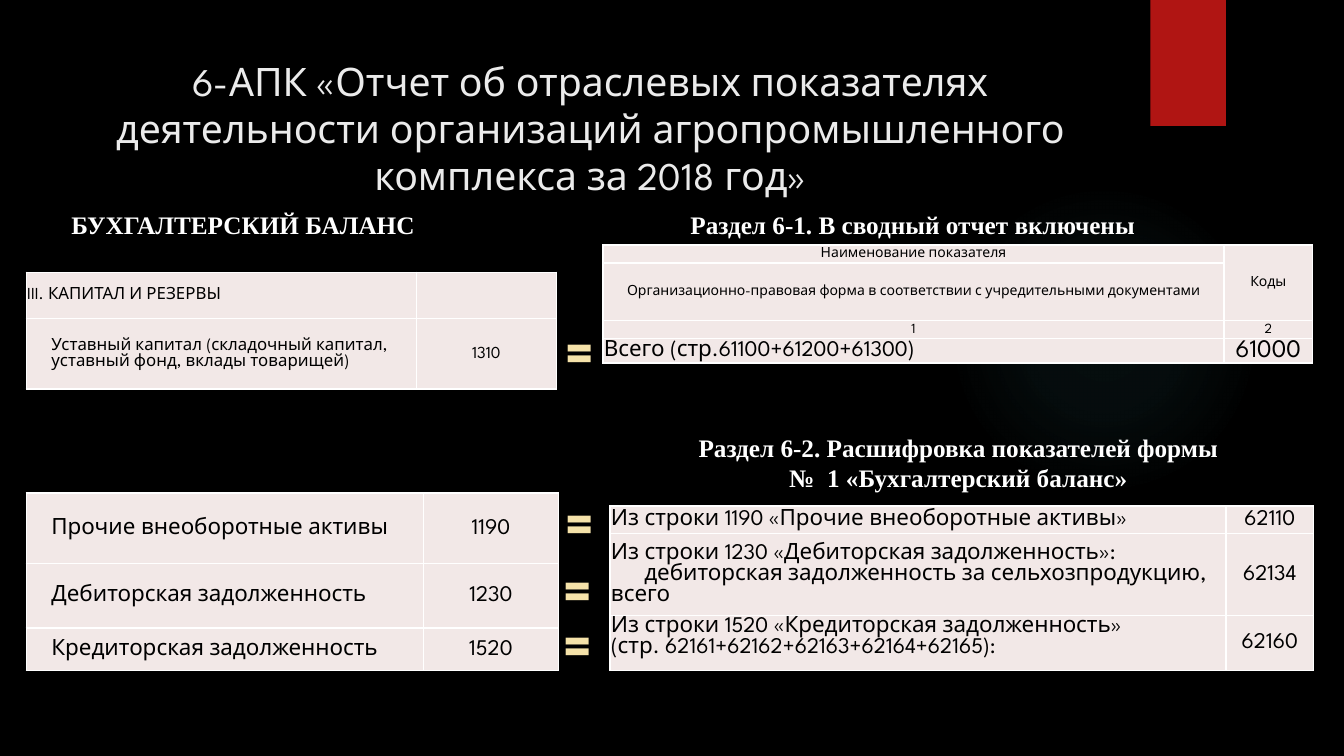
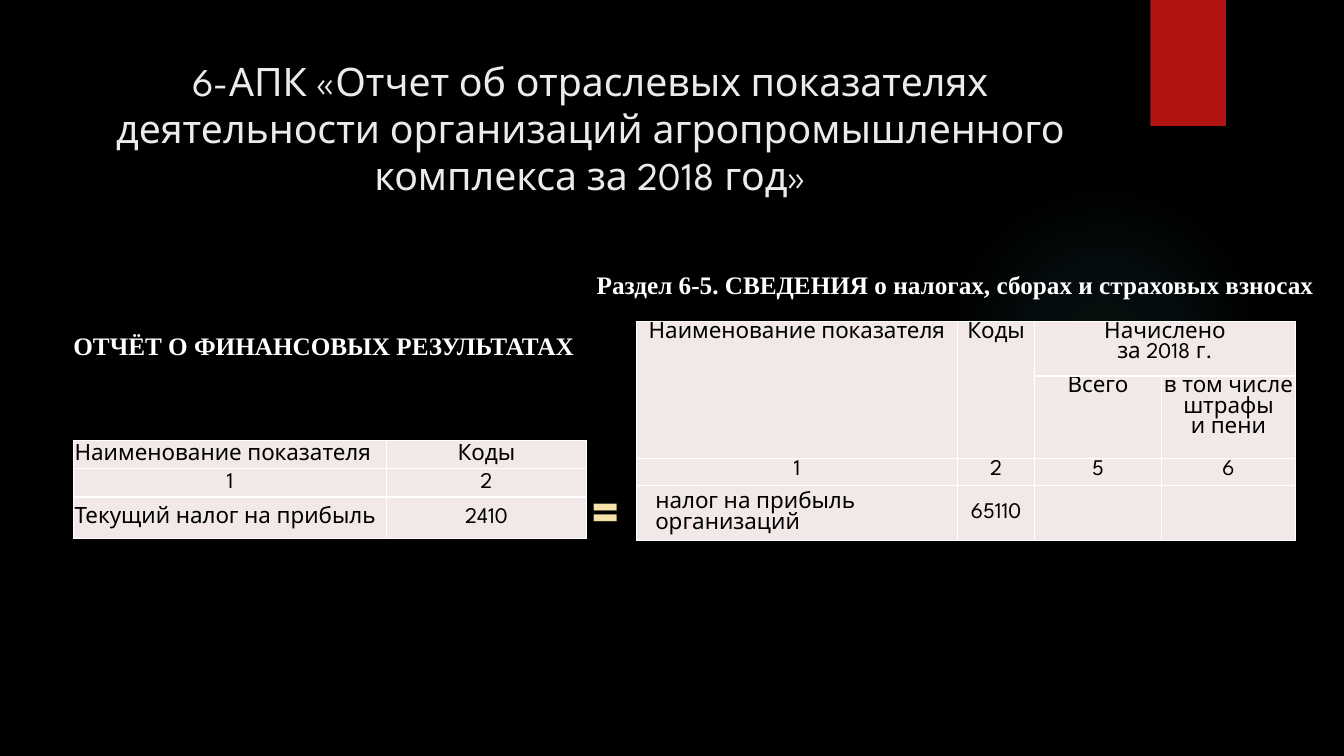
"""Build two slides that match balance sheet lines to 6-АПК report lines."""
from dataclasses import dataclass

from lxml.etree import SubElement
from pptx import Presentation
from pptx.dml.color import RGBColor
from pptx.enum.shapes import MSO_SHAPE
from pptx.enum.text import MSO_ANCHOR, PP_ALIGN
from pptx.oxml import parse_xml
from pptx.oxml.ns import nsdecls, qn
from pptx.util import Inches, Pt


@dataclass(frozen=True)
class Theme:
    background: str = "000000"
    accent: str = "B01513"
    glow: str = "50B9C1"
    title: str = "EBEBEB"
    heading: str = "FFFFFF"
    equals: str = "F5E2A9"
    cell: str = "F2E8E7"
    cell_text: str = "000000"
    border: str = "FFFFFF"
    sans: str = "League Spartan"
    serif: str = "Times New Roman"
    title_size: int = 28
    heading_size: int = 18
    equals_size: int = 40
    loose: float = 1.2
    tight: float = 0.92


@dataclass(frozen=True)
class Cell:
    text: str = ""
    centred: bool = True
    inset: float = 0.01
    top: bool = False
    span: tuple = (1, 1)
    size: int = 0
    indents: tuple = ()


def left(text, inset=0.01, **options):
    return Cell(text, centred=False, inset=inset, **options)


def top(text, span=(1, 1)):
    return Cell(text, top=True, span=span)


THEME = Theme()
TITLE = "6-АПК «Отчет об отраслевых показателях деятельности организаций агропромышленного комплекса за 2018 год»"

SLIDES = [
    {
        "headings": [
            ((6.75, 2.03, 4.73, 0.4), ["Раздел 6-1. В сводный отчет включены"], False),
            ((0.61, 2.03, 3.84, 0.4), ["БУХГАЛТЕРСКИЙ БАЛАНС"], False),
            ((6.17, 4.24, 6.67, 0.71),
             ["Раздел 6-2. Расшифровка показателей формы", "№  1 «Бухгалтерский баланс»"], True),
        ],
        "equals": [(5.51, 3.09), (5.51, 4.79), (5.49, 5.45), (5.49, 6)],
        "tables": [
            {
                "at": (5.98, 3.36), "size": 16, "columns": [6.16, 0.88], "heights": [0.24],
                "rows": [[left("Всего (стр.61100+61200+61300)"), Cell("61000", size=18)]],
            },
            {
                "at": (5.98, 2.43), "size": 10, "columns": [6.16, 0.88], "heights": [0.18, 0.57, 0.18],
                "rows": [
                    [Cell("Наименование показателя"), Cell("Коды", span=(2, 1))],
                    [Cell("Организационно-правовая форма в соответствии с учредительными документами"), None],
                    [Cell("1"), Cell("2")],
                ],
            },
            {
                "at": (0.26, 2.7), "size": 12, "columns": [3.87, 1.39], "heights": [0.46, 0.7],
                "rows": [
                    [left("III. КАПИТАЛ И РЕЗЕРВЫ"), Cell()],
                    [left("Уставный капитал (складочный капитал, уставный фонд, вклады товарищей)", 0.25),
                     Cell("1310")],
                ],
            },
            {
                "at": (6.05, 5.02), "size": 16, "columns": [6.11, 0.87], "heights": [0.27, 0.82, 0.54],
                "rows": [
                    [left("Из строки 1190 «Прочие внеоборотные активы»"), Cell("62110")],
                    [left("Из строки 1230 «Дебиторская задолженность»:\n"
                          "дебиторская задолженность за сельхозпродукцию, всего", indents=(0, 0.33)),
                     Cell("62134")],
                    [left("Из строки 1520 «Кредиторская задолженность»\n"
                          "(стр. 62161+62162+62163+62164+62165):", top=True), Cell("62160")],
                ],
            },
            {
                "at": (0.26, 4.89), "size": 16, "columns": [3.94, 1.34], "heights": [0.7, 0.64, 0.42],
                "rows": [
                    [left("Прочие внеоборотные активы", 0.25), Cell("1190")],
                    [left("Дебиторская задолженность", 0.25), Cell("1230")],
                    [left("Кредиторская задолженность", 0.25), Cell("1520")],
                ],
            },
        ],
    },
    {
        "headings": [
            ((5.82, 2.62, 7.51, 0.4), ["Раздел 6-5. СВЕДЕНИЯ о налогах, сборах и страховых взносах"], False),
            ((0.63, 3.23, 5.22, 0.4), ["ОТЧЁТ О ФИНАНСОВЫХ РЕЗУЛЬТАТАХ"], False),
        ],
        "equals": [(5.77, 4.67)],
        "tables": [
            {
                "at": (6.31, 3.19), "size": 16, "columns": [3.19, 0.76, 1.26, 1.33],
                "heights": [0.54, 0.82, 0.27, 0.54],
                "rows": [
                    [top("Наименование показателя", (2, 1)), top("Коды", (2, 1)),
                     top("Начислено\nза 2018 г.", (1, 2)), None],
                    [None, None, top("Всего"), top("в том числе штрафы\nи пени")],
                    [top("1"), top("2"), top("5"), top("6")],
                    [left("налог на прибыль организаций", 0.19), Cell("65110"), Cell(), Cell()],
                ],
            },
            {
                "at": (0.73, 4.37), "size": 16, "columns": [3.1, 1.99], "heights": [0.28, 0.28, 0.41],
                "rows": [
                    [left("Наименование показателя"), Cell("Коды")],
                    [Cell("1"), Cell("2")],
                    [left("Текущий налог на прибыль"), Cell("2410")],
                ],
            },
        ],
    },
]


def write(frame, lines, font, size, color, bold=False, centred=False, spacing=None, indents=()):
    for index, line in enumerate(lines):
        para = frame.paragraphs[0] if index == 0 else frame.add_paragraph()
        para.alignment = PP_ALIGN.CENTER if centred else PP_ALIGN.LEFT
        if spacing:
            para.line_spacing = Pt(round(size * spacing, 1))
        if indents:
            para._p.get_or_add_pPr().set("indent", str(Inches(indents[index])))
        if not line:
            para.font.size = Pt(size)
            continue
        span = para.add_run()
        span.text = line
        span.font.name = font
        span.font.size = Pt(size)
        span.font.bold = bold
        span.font.color.rgb = RGBColor.from_string(color)


def add_box(page, at, lines, font, size, color, wrap=False, anchor=MSO_ANCHOR.TOP, **style):
    box = page.shapes.add_textbox(*map(Inches, at))
    frame = box.text_frame
    frame.word_wrap = wrap
    frame.vertical_anchor = anchor
    write(frame, lines, font, size, color, **style)


def add_plain_shape(page, kind, at, color):
    shape = page.shapes.add_shape(kind, *map(Inches, at))
    shape.fill.solid()
    shape.fill.fore_color.rgb = RGBColor.from_string(color)
    shape.line.fill.background()
    shape.shadow.inherit = False
    return shape


def add_backdrop(page):
    page.background.fill.solid()
    page.background.fill.fore_color.rgb = RGBColor.from_string(THEME.background)
    glow = add_plain_shape(page, MSO_SHAPE.OVAL, (9.41, 1.83, 3.08, 3.08), THEME.glow)
    stops = "".join(
        f'<a:gs pos="{place * 1000}"><a:srgbClr val="{THEME.glow}">'
        f'<a:alpha val="{alpha * 1000}"/></a:srgbClr></a:gs>'
        for place, alpha in [(0, 7), (36, 6), (69, 0), (100, 0)])
    gradient = parse_xml(
        f'<a:gradFill {nsdecls("a")} rotWithShape="1"><a:gsLst>{stops}</a:gsLst><a:path path="circle">'
        '<a:fillToRect l="50000" t="50000" r="50000" b="50000"/></a:path></a:gradFill>')
    properties = glow._element.spPr
    properties.replace(properties.find(qn("a:solidFill")), gradient)

    ribbon = add_plain_shape(page, MSO_SHAPE.RECTANGLE, (11.41, 0, 0.75, 1.25), THEME.accent)
    effects = ribbon._element.spPr.find(qn("a:effectLst"))
    effects.append(parse_xml(
        f'<a:outerShdw {nsdecls("a")} blurRad="{Pt(3)}" dist="{Pt(2)}" dir="5400000" rotWithShape="0">'
        '<a:srgbClr val="000000"><a:alpha val="45000"/></a:srgbClr></a:outerShdw>'))
    add_box(page, (0.71, 0.5, 10.29, 1.53), [TITLE], THEME.sans, THEME.title_size, THEME.title,
            wrap=True, anchor=MSO_ANCHOR.MIDDLE, centred=True, spacing=THEME.loose)


def style_cell(cell):
    properties = cell._tc.get_or_add_tcPr()
    for side in ("a:lnL", "a:lnR", "a:lnT", "a:lnB"):
        line = SubElement(properties, qn(side), w=str(Pt(1)))
        fill = SubElement(line, qn("a:solidFill"))
        SubElement(fill, qn("a:srgbClr"), val=THEME.border)
    cell.fill.solid()
    cell.fill.fore_color.rgb = RGBColor.from_string(THEME.cell)


def fill_cell(cell, content, size):
    cell.margin_left = Inches(content.inset)
    cell.margin_right = cell.margin_top = Inches(0.01)
    cell.margin_bottom = 0
    cell.vertical_anchor = MSO_ANCHOR.TOP if content.top else MSO_ANCHOR.MIDDLE
    write(cell.text_frame, content.text.split("\n"), THEME.sans, content.size or size, THEME.cell_text,
          centred=content.centred, spacing=THEME.tight, indents=content.indents)


def add_grid(page, data):
    columns, heights = data["columns"], data["heights"]
    place = (*data["at"], sum(columns), sum(heights))
    table = page.shapes.add_table(len(heights), len(columns), *map(Inches, place)).table
    table.first_row = table.horz_banding = False
    for column, width in zip(table.columns, columns):
        column.width = Inches(width)
    for row, height in zip(table.rows, heights):
        row.height = Inches(height)
    for i, contents in enumerate(data["rows"]):
        for j, content in enumerate(contents):
            cell = table.cell(i, j)
            style_cell(cell)
            if content is None:
                continue
            fill_cell(cell, content, data["size"])
            if content.span != (1, 1):
                down, across = content.span
                cell.merge(table.cell(i + down - 1, j + across - 1))


def main():
    deck = Presentation()
    deck.slide_width, deck.slide_height = Inches(13.33), Inches(7.5)
    for slide in SLIDES:
        page = deck.slides.add_slide(deck.slide_layouts[6])
        add_backdrop(page)
        for data in slide["tables"]:
            add_grid(page, data)
        for at, lines, centred in slide["headings"]:
            add_box(page, at, lines, THEME.serif, THEME.heading_size, THEME.heading,
                    wrap=centred, bold=True, centred=centred)
        for at in slide["equals"]:
            add_box(page, (*at, 0.54, 0.77), ["="], THEME.sans, THEME.equals_size, THEME.equals,
                    bold=True, spacing=THEME.loose)
    deck.save("out.pptx")


if __name__ == "__main__":
    main()
